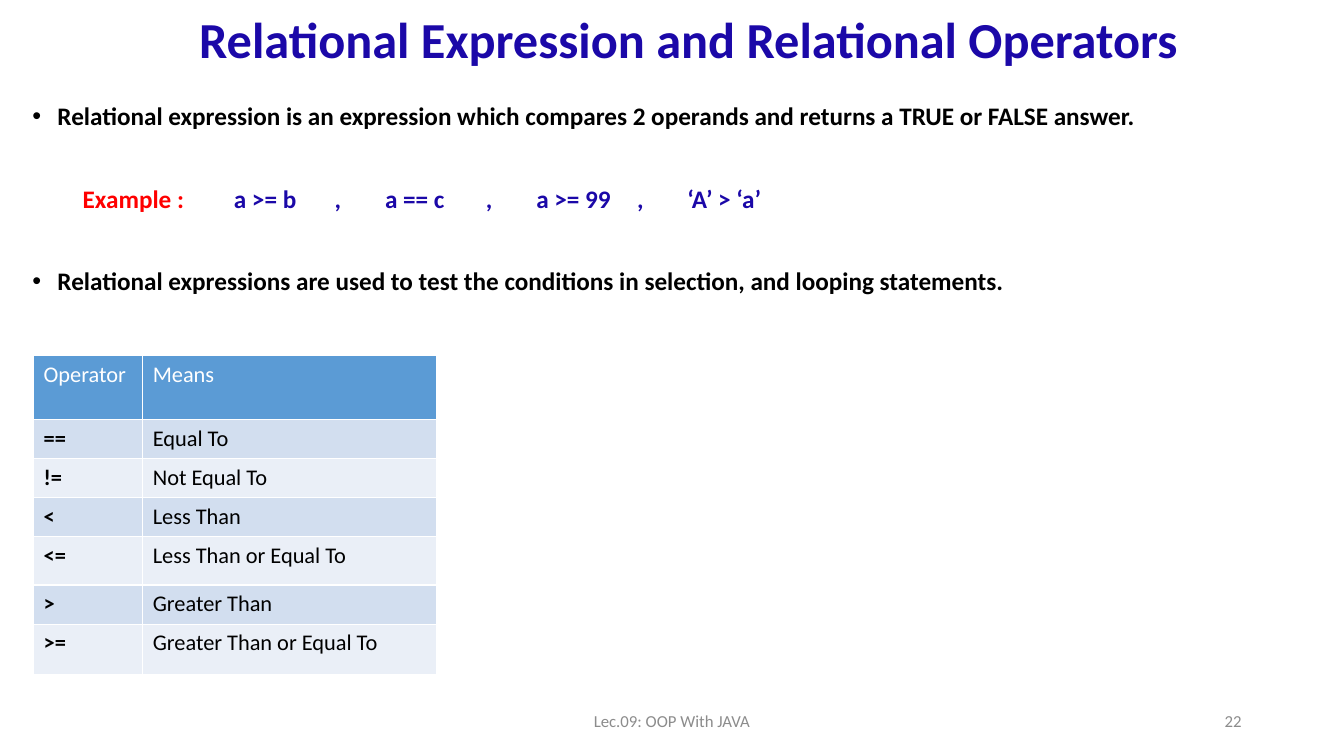
from lxml import etree
from pptx import Presentation
from pptx.dml.color import RGBColor
from pptx.enum.text import MSO_ANCHOR, MSO_AUTO_SIZE, PP_ALIGN
from pptx.oxml import parse_xml
from pptx.oxml.ns import nsdecls, qn
from pptx.util import Inches, Pt

COLUMNS, ROWS = 160, 90
UNIT = Inches(1) // 12  # the slide is a grid of square cells, 12 to the inch
NAVY, RED, BLACK, WHITE, GREY = "1B08A8", "FF0000", "000000", "FFFFFF", "8C8C8C"
HEADER_BLUE, BANDS = "5B9BD5", ("D2DEEF", "EAEFF7")


def grid(*cells):
    """Turn counts of grid cells into lengths."""
    return [round(count * UNIT) for count in cells]


def style(font, size, color, bold=False):
    font.name, font.size, font.bold = "Calibri", Pt(size), bold
    font.color.rgb = RGBColor.from_string(color)


prs = Presentation()
prs.slide_width, prs.slide_height = grid(COLUMNS, ROWS)
slide = prs.slides.add_slide(prs.slide_layouts[1])

# Title
title = slide.shapes.title
title.left, title.top, title.width, title.height = grid(22.5, 0, 126.4, 10)
title.text_frame.auto_size = MSO_AUTO_SIZE.NONE
title.text_frame.vertical_anchor = MSO_ANCHOR.MIDDLE
heading = title.text_frame.paragraphs[0]
heading.text = "Relational Expression and Relational Operators"
heading.alignment, heading.line_spacing = PP_ALIGN.LEFT, 0.9
style(heading.font, 36, NAVY, True)

# Definition, example and use
body = slide.placeholders[1]
body.left, body.top, body.width, body.height = grid(2.64, 11.76, 156, 26.64)
body.text_frame.auto_size = MSO_AUTO_SIZE.NONE
body.text_frame.vertical_anchor = MSO_ANCHOR.TOP
definition = body.text_frame.paragraphs[0]
example = body.text_frame.add_paragraph()
use = body.text_frame.add_paragraph()

bullet_indent, = grid(3)
for point, text in (
    (definition, "Relational expression is an expression which compares 2 operands "
                 "and returns a TRUE or FALSE answer."),
    (use, "Relational expressions are used to test the conditions in selection, "
          "and looping statements."),
):
    point.text = text
    properties = point._p.get_or_add_pPr()
    properties.set("marL", str(bullet_indent))
    properties.set("indent", str(-bullet_indent))

properties = example._p.get_or_add_pPr()
properties.set("marL", "0")
properties.set("indent", "0")
etree.SubElement(properties, qn("a:buNone"))
tab_list = etree.SubElement(properties, qn("a:tabLst"))
for position in grid(15, 29.2, 38.6, 44.2, 55.3, 58.8, 69, 73.2):
    etree.SubElement(tab_list, qn("a:tab"), pos=str(position), algn="l")

for paragraph in (definition, example, use):
    paragraph.line_spacing = 0.9
    paragraph.space_before = Pt(0 if paragraph is definition else 39.5)
    style(paragraph.font, 18, BLACK, True)

for text, color in (("\tExample :", RED),
                    ("\ta >= b\t,\ta == c\t,\ta >= 99\t,\t‘A’ > ‘a’", NAVY)):
    run = example.add_run()
    run.text = text
    style(run.font, 18, color, True)

# Operator table
operators = (
    ("Operator", "Means"),
    ("==", "Equal To"),
    ("!=", "Not Equal To"),
    ("<", "Less Than"),
    ("<=", "Less Than or Equal To"),
    (">", "Greater Than"),
    (">=", "Greater Than or Equal To"),
)
row_heights = grid(7.6, 4.65, 4.65, 4.65, 5.75, 4.65, 6.05)
column_widths = grid(13, 35)
table = slide.shapes.add_table(
    len(operators), 2, *grid(4, 42.36), sum(column_widths), sum(row_heights)).table
for column, width in zip(table.columns, column_widths):
    column.width = width

for r, (words, height) in enumerate(zip(operators, row_heights)):
    table.rows[r].height = height
    for c, word in enumerate(words):
        cell = table.cell(r, c)
        cell.text = word
        style(cell.text_frame.paragraphs[0].font, 16,
              BLACK if r else WHITE, r > 0 and c == 0)
        for side in ("lnL", "lnR", "lnT", "lnB"):
            cell._tc.get_or_add_tcPr().append(parse_xml(
                f'<a:{side} {nsdecls("a")} w="{Pt(1)}"><a:solidFill>'
                f'<a:srgbClr val="{WHITE}"/></a:solidFill></a:{side}>'))
        cell.fill.solid()
        cell.fill.fore_color.rgb = RGBColor.from_string(
            BANDS[(r - 1) % 2] if r else HEADER_BLUE)

# Footer and page number
for text, left, width, alignment in (
    ("Lec.09: OOP With JAVA", 53, 54, PP_ALIGN.CENTER),
    ("22", 113, 36, PP_ALIGN.RIGHT),
):
    frame = slide.shapes.add_textbox(*grid(left, 83.4, width, 4.8)).text_frame
    frame.word_wrap = True
    frame.vertical_anchor = MSO_ANCHOR.MIDDLE
    note = frame.paragraphs[0]
    note.text, note.alignment = text, alignment
    style(note.font, 12, GREY)

prs.save("out.pptx")
